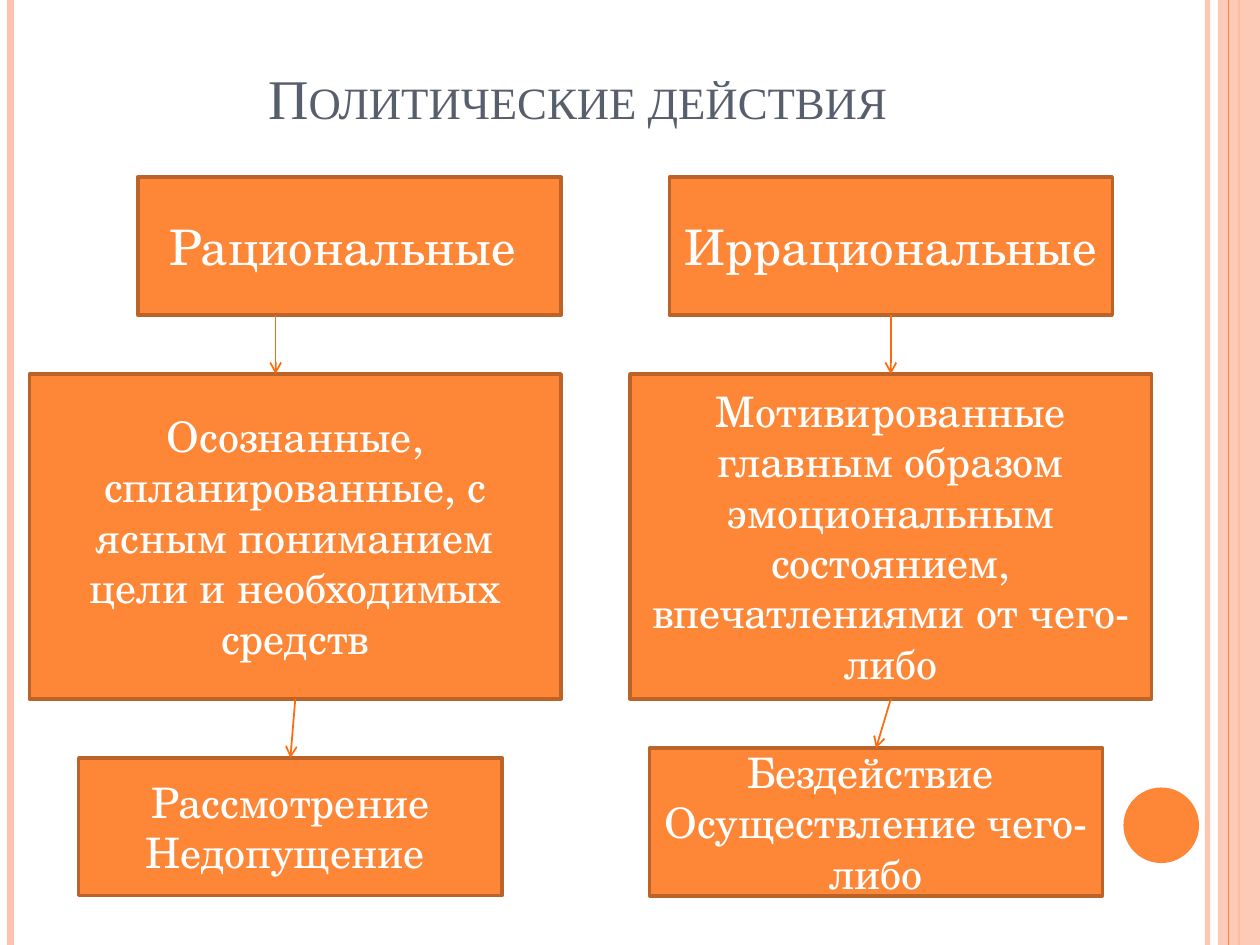
from typing import NamedTuple

from lxml.etree import SubElement
from pptx import Presentation
from pptx.dml.color import RGBColor as RGB
from pptx.enum.shapes import MSO_CONNECTOR as CONN, MSO_SHAPE as SHAPE
from pptx.enum.text import MSO_ANCHOR as ANCHOR, PP_ALIGN as ALIGN
from pptx.oxml.ns import qn
from pptx.util import Pt

COLORS = {
    "orange": "FE8637",
    "peach": "FEC3AE",
    "border": "BC6329",
    "arrow": "FF6B0A",
    "title": "575F6D",
    "white": "FFFFFF",
}
SLIDE_W, SLIDE_H = 720, 540
TITLE_FONT, BODY_FONT = "Times New Roman", "TeX Gyre Schola"


class Box(NamedTuple):
    left: float
    top: float
    width: float
    height: float
    paragraphs: tuple[str, ...]
    size: float = 24


class Line(NamedTuple):
    x1: float
    y1: float
    x2: float
    y2: float
    color: str
    width: float
    alpha: int = 100
    arrow: bool = False


def rgb(name: str) -> RGB:
    return RGB.from_string(COLORS[name])


def set_alpha(fill, percent: int) -> None:
    """Make the solid fill inside the given XML element translucent."""
    color = fill.find(qn("a:solidFill"))[0]
    SubElement(color, qn("a:alpha"), val=str(percent * 1000))


def write_text(sp, paragraphs, *, size, font=BODY_FONT, color="white",
               anchor=ANCHOR.MIDDLE, small_caps=False) -> None:
    tf = sp.text_frame
    tf.word_wrap = True
    tf.vertical_anchor = anchor
    for i, text in enumerate(paragraphs):
        p = tf.add_paragraph() if i else tf.paragraphs[0]
        p.alignment = ALIGN.CENTER
        r = p.add_run()
        r.text = text
        r.font.size, r.font.name = Pt(size), font
        r.font.color.rgb = rgb(color)
        if small_caps:
            r.font._element.set("cap", "small")


def add_filled(s, kind, left: float, top: float, width: float, height: float,
               fill: str, border: str | None = None):
    sp = s.shapes.add_shape(kind, Pt(left), Pt(top), Pt(width), Pt(height))
    sp.shadow.inherit = False
    sp.fill.solid()
    sp.fill.fore_color.rgb = rgb(fill)
    if border:
        sp.line.color.rgb = rgb(border)
        sp.line.width = Pt(2)
    else:
        sp.line.fill.background()
    return sp


def add_box(s, box: Box) -> None:
    sp = add_filled(s, SHAPE.RECTANGLE, *box[:4], "orange", "border")
    write_text(sp, box.paragraphs, size=box.size)


def add_line(s, line: Line) -> None:
    cx = s.shapes.add_connector(CONN.STRAIGHT, *map(Pt, line[:4]))
    cx.line.color.rgb = rgb(line.color)
    cx.line.width = Pt(line.width)
    ln = cx.line._get_or_add_ln()
    if line.alpha < 100:
        set_alpha(ln, line.alpha)
    if line.arrow:
        SubElement(ln, qn("a:tailEnd"), type="arrow")
    SubElement(cx._element.spPr, qn("a:effectLst"))


def stripe(x: float, color: str, width: float, alpha: int = 100) -> Line:
    return Line(x, 0, x, SLIDE_H, color, width, alpha)


def arrow(x1: float, y1: float, x2: float, y2: float) -> Line:
    return Line(x1, y1, x2, y2, "arrow", 1, arrow=True)


BOXES = [
    Box(78.75, 101.25, 241.9, 78.75, ("Рациональные ",), 28),
    Box(382.5, 101.25, 253.1, 78.75, ("Иррациональные ",), 28),
    Box(16.9, 213.75, 303.75, 185.6,
        ("Осознанные, спланированные, с ясным пониманием цели "
         "и необходимых средств",)),
    Box(360, 213.75, 298.1, 185.6,
        ("Мотивированные главным образом эмоциональным состоянием, "
         "впечатлениями от чего-либо",)),
    Box(45, 433.1, 241.9, 78.75, ("Рассмотрение", "Недопущение ")),
    Box(371.25, 427.5, 258.75, 84.4,
        ("Бездействие ", "Осуществление чего-либо")),
]

ARROWS = [
    arrow(157.5, 180, 157.5, 213.75),
    arrow(509.05, 180, 509.05, 213.75),
    arrow(168.75, 399.35, 165.95, 433.1),
    arrow(509.05, 399.35, 500.6, 427.5),
]


def main() -> None:
    prs = Presentation()
    prs.slide_width, prs.slide_height = Pt(SLIDE_W), Pt(SLIDE_H)
    s = prs.slides.add_slide(prs.slide_layouts[6])

    # Side stripes and corner dot
    for line in (stripe(690, "peach", 3, 93), stripe(6, "peach", 4.5),
                 stripe(708, "orange", 1.5)):
        add_line(s, line)
    band = add_filled(s, SHAPE.RECTANGLE, 696, 0, 24, SLIDE_H, "peach")
    set_alpha(band._element.spPr, 87)
    add_line(s, stripe(702, "orange", 0.75))
    add_filled(s, SHAPE.OVAL, 642, 450, 43.2, 43.2, "orange")

    # Title
    title = s.shapes.add_textbox(Pt(36), Pt(21.6), Pt(588), Pt(56.9))
    write_text(title, ["Политические действия"], size=32, font=TITLE_FONT,
               color="title", anchor=ANCHOR.BOTTOM, small_caps=True)

    # Two columns of boxes joined by arrows
    for box in BOXES:
        add_box(s, box)
    for line in ARROWS:
        add_line(s, line)

    prs.save("out.pptx")


if __name__ == "__main__":
    main()
